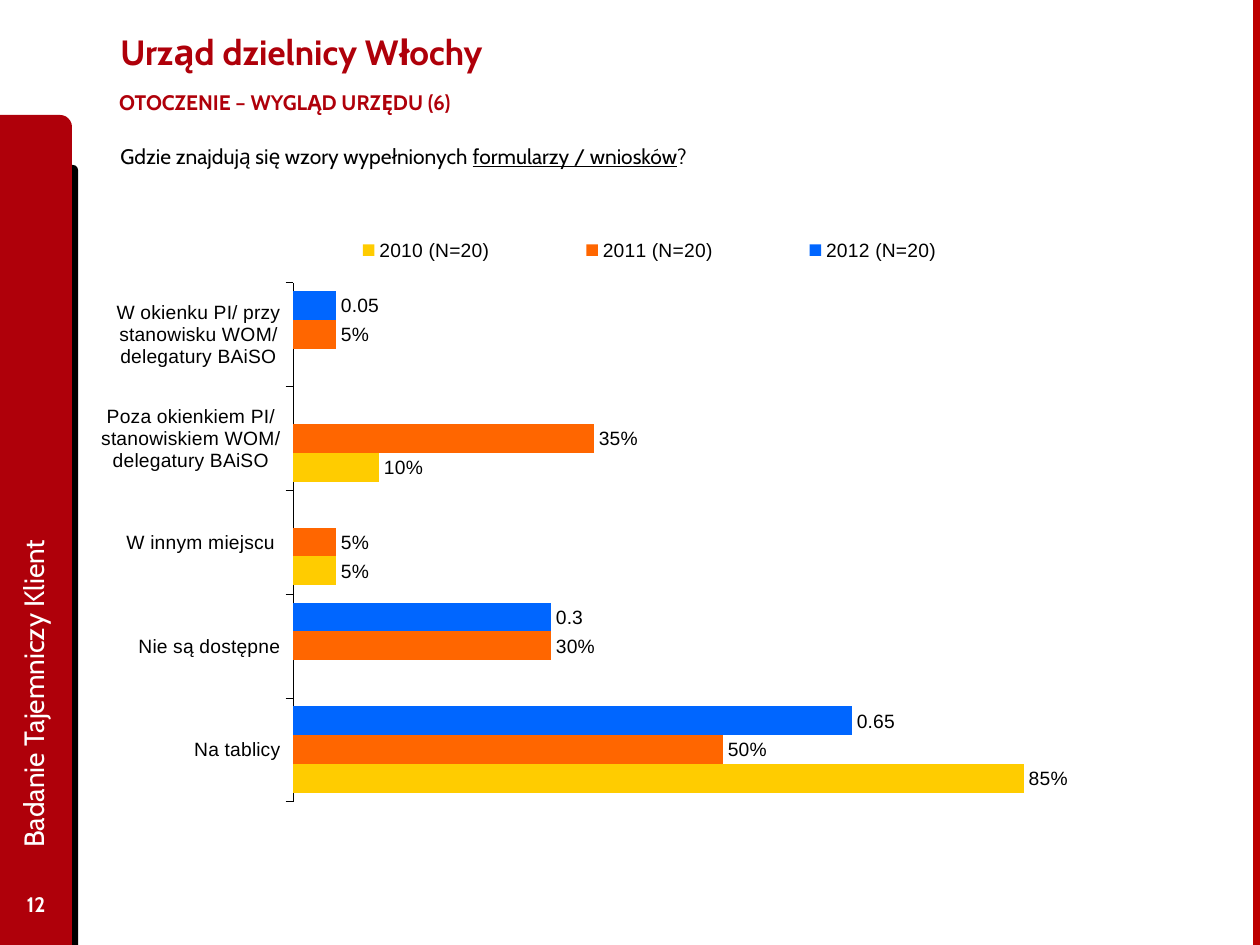
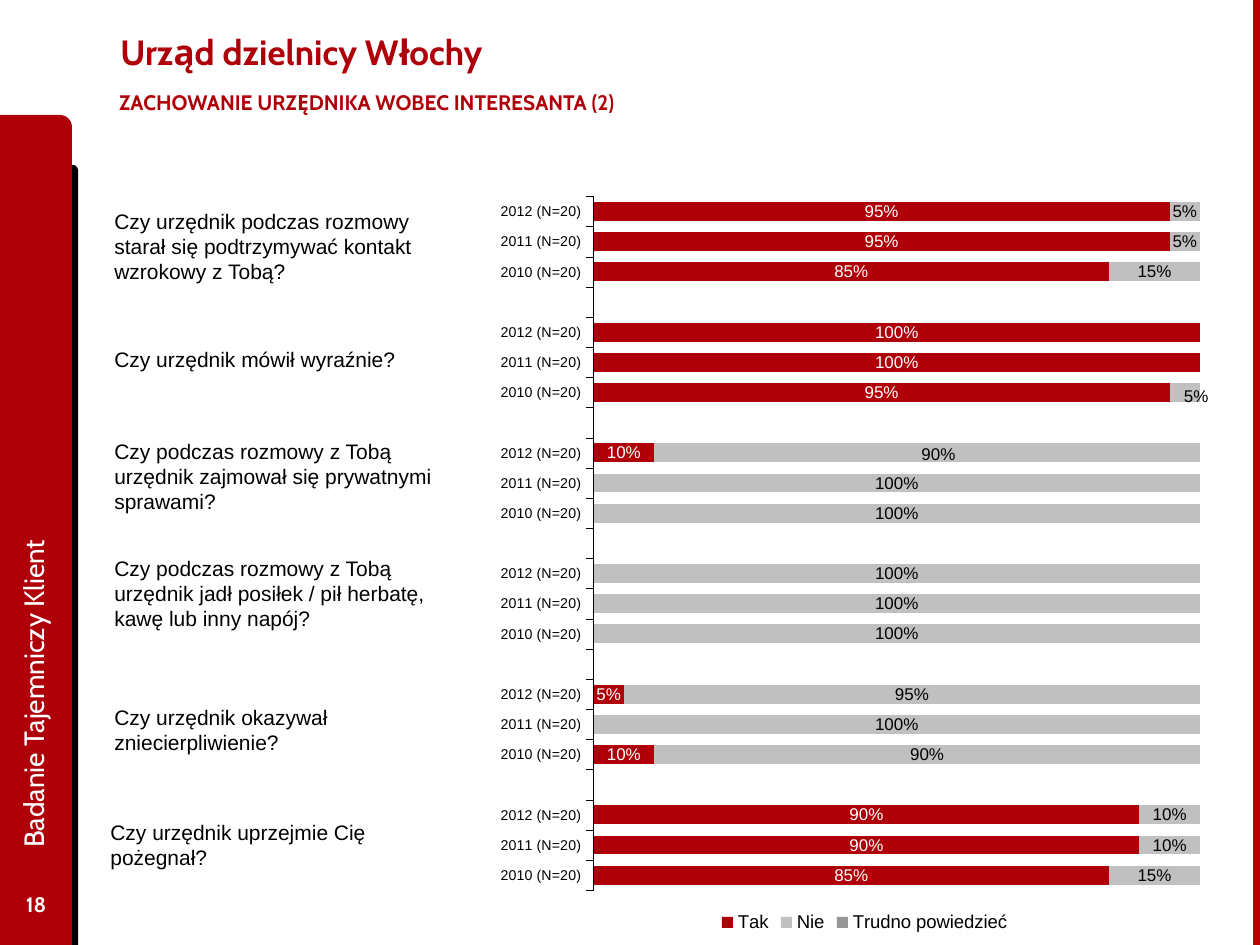
import pptx
import pptx.util
import pptx.chart.data
import pptx.dml.color
import pptx.enum.chart
import pptx.enum.shapes
import pptx.enum.text
import pptx.oxml

SCALE = 914400 / 126
RED, BLACK, WHITE, GREY = "AF000A", "000000", "FFFFFF", "C0C0C0"
HEAD, BODY = "Cabin", "Arial"
CHART = pptx.enum.chart
ANCHOR = pptx.enum.text.MSO_ANCHOR
NS = 'xmlns:c="http://schemas.openxmlformats.org/drawingml/2006/chart"'


def emu(px):
    return pptx.util.Emu(round(px * SCALE))


def color(code):
    return pptx.dml.color.RGBColor.from_string(code)


def layout(x, y, w=None, h=None):
    """Manual layout element; without a size it is an offset."""
    if w is None:
        tags = {"x": x, "y": y}
    else:
        tags = {"layoutTarget": "inner", "xMode": "edge", "yMode": "edge",
                "x": x, "y": y, "w": w, "h": h}
    parts = "".join(f'<c:{tag} val="{val}"/>' for tag, val in tags.items())
    return pptx.oxml.parse_xml(
        f"<c:layout {NS}><c:manualLayout>{parts}</c:manualLayout></c:layout>")


def place(owner, item, after=None):
    """Swap in a layout, first in its owner or right after a child."""
    for old in owner.findall(item.tag):
        owner.remove(old)
    if after is None:
        owner.insert(0, item)
    else:
        after.addnext(item)


class Deck:
    def __init__(self):
        self.prs = pptx.Presentation()
        self.prs.slide_width, self.prs.slide_height = emu(1260), emu(945)
        self.slide = None

    def font(self, font, size, code, name=BODY, bold=False):
        font.size, font.name, font.bold = pptx.util.Pt(size), name, bold
        font.color.rgb = color(code)

    def block(self, kind, box, code):
        shape = self.slide.shapes.add_shape(kind, *map(emu, box))
        shape.shadow.inherit = False
        shape.fill.solid()
        shape.fill.fore_color.rgb = color(code)
        shape.line.fill.background()

    def text(self, runs, box, size, code=BLACK, name=HEAD, bold=False,
             anchor=ANCHOR.TOP, align=None, turn=0):
        """Add a text box; every second run is underlined."""
        shape = self.slide.shapes.add_textbox(*map(emu, box))
        shape.rotation = turn
        frame = shape.text_frame
        frame.word_wrap, frame.vertical_anchor = True, anchor
        par = frame.paragraphs[0]
        par.alignment = align
        for num, part in enumerate(runs):
            run = par.add_run()
            run.text = part
            self.font(run.font, size, code, name, bold)
            run.font.underline = num % 2 == 1
        return frame

    def page(self, num, topic):
        self.slide = self.prs.slides.add_slide(self.prs.slide_layouts[6])
        kinds = pptx.enum.shapes.MSO_SHAPE
        mid = ANCHOR.MIDDLE
        self.block(kinds.ROUND_1_RECTANGLE, (48, 165, 30, 780), BLACK)
        self.block(kinds.ROUND_1_RECTANGLE, (0, 115, 72, 830), RED)
        self.block(kinds.RECTANGLE, (1253, 0, 7, 945), "BD0000")
        self.text(["Urząd dzielnicy Włochy"], (108, 6, 979, 91), 20, RED,
                  bold=True, anchor=mid)
        frame = self.text([topic], (94, 83, 900, 42), 12, RED, bold=True)
        frame.margin_left = frame.margin_right = emu(25)
        self.text([str(num)], (0, 879, 72, 50), 12, WHITE, bold=True,
                  anchor=mid, align=pptx.enum.text.PP_ALIGN.CENTER)
        self.text(["Badanie Tajemniczy Klient"], (-330, 465, 726, 64), 16,
                  WHITE, anchor=mid, turn=270)

    def chart(self, kind, box, cats, rows, plot, top, size, axis, mark, spot,
              legend):
        """Add a bar chart; a row is name, values, fill, label colour, format."""
        data = pptx.chart.data.CategoryChartData()
        data.categories = cats
        for name, vals, _, _, form in rows:
            data.add_series(name, vals, form)
        chart = self.slide.shapes.add_chart(kind, *map(emu, box), data).chart
        self.font(chart.font, size, BLACK)
        chart.has_title = False
        chart.has_legend = True
        chart.legend.position = legend
        chart.legend.include_in_layout = False
        self.font(chart.legend.font, size, BLACK)
        cat, val = chart.category_axis, chart.value_axis
        cat.reverse_order = True
        cat.major_tick_mark = CHART.XL_TICK_MARK.OUTSIDE
        cat.format.line.color.rgb = color(BLACK)
        cat.format.line.width = pptx.util.Pt(0.25)
        self.font(cat.tick_labels.font, axis, BLACK)
        val.visible = val.has_major_gridlines = False
        val.minimum_scale, val.maximum_scale = 0, top
        bars = chart.plots[0]
        bars.gap_width, bars.vary_by_categories = 60, False
        for series, (_, _, fill, ink, form) in zip(bars.series, rows):
            series.format.fill.solid()
            series.format.fill.fore_color.rgb = color(fill)
            series.invert_if_negative = False
            labels = series.data_labels
            labels.show_value, labels.position = True, spot
            labels.number_format, labels.number_format_is_linked = form, False
            self.font(labels.font, mark, ink)
        place(chart.plots[0]._element.getparent(), layout(*plot))
        return chart

    def nudge(self, series, num, x, y, size):
        """Shift one percent label by a share of the chart."""
        label = series.points[num].data_label
        self.font(label.font, size, BLACK)
        label.position = CHART.XL_LABEL_POSITION.CENTER
        item = series.data_labels._element.xpath(
            f"c:dLbl[c:idx/@val='{num}']")[0]
        place(item, layout(x, y), item[0])
        item[1].addnext(pptx.oxml.parse_xml(
            f'<c:numFmt {NS} formatCode="0%" sourceLinked="0"/>'))


def forms(deck):
    deck.page(12, "OTOCZENIE – WYGLĄD URZĘDU (6)")
    deck.text(["Gdzie znajdują się wzory wypełnionych ",
               "formularzy / wniosków", "?"], (108, 137, 815, 38), 12)
    cats = ["W okienku PI/ przy stanowisku WOM/ delegatury BAiSO",
            "Poza okienkiem PI/ stanowiskiem WOM/ delegatury BAiSO",
            "W innym miejscu ", "Nie są dostępne", "Na tablicy"]
    rows = [
        ("2012 (N=20)", (0.05, None, None, 0.3, 0.65), "0066FF", BLACK,
         "General"),
        ("2011 (N=20)", (0.05, 0.35, 0.05, 0.3, 0.5), "FF6600", BLACK, "0%"),
        ("2010 (N=20)", (None, 0.1, 0.05, None, 0.85), "FFCC00", BLACK, "0%"),
    ]
    chart = deck.chart(
        CHART.XL_CHART_TYPE.BAR_CLUSTERED, (101, 233, 1143, 570), cats, rows,
        (0.168, 0.087, 0.677, 0.911), 0.9, 11, 11, 11,
        CHART.XL_LABEL_POSITION.OUTSIDE_END, CHART.XL_LEGEND_POSITION.TOP)
    legend = chart.legend._element
    spread = layout(0.15, 0, 0.66, 0.06)
    spread[0].remove(spread[0][0])
    place(legend, spread, legend[0])


def manners(deck):
    deck.page(18, "ZACHOWANIE URZĘDNIKA WOBEC INTERESANTA (2)")
    asks = [
        ("Czy urzędnik podczas rozmowy starał się podtrzymywać kontakt "
         "wzrokowy z Tobą?", 102, 202, (0.95, 0.95, 0.85)),
        ("Czy urzędnik mówił wyraźnie?", 102, 340, (1, 1, 0.95)),
        ("Czy podczas rozmowy z Tobą urzędnik zajmował się prywatnymi "
         "sprawami?", 102, 432, (0.1, 0, 0)),
        ("Czy podczas rozmowy z Tobą urzędnik jadł posiłek / pił herbatę, "
         "kawę lub inny napój?", 102, 549, (0, 0, 0)),
        ("Czy urzędnik okazywał zniecierpliwienie?", 102, 698,
         (0.05, 0, 0.1)),
        ("Czy urzędnik uprzejmie Cię pożegnał?", 98, 813, (0.9, 0.9, 0.85)),
    ]
    cats, yes, no = [], [], []
    for ask, left, top, shares in asks:
        deck.text([ask], (left, top, 343, 88), 12, name=BODY)
        if cats:
            cats.append("")
            yes.append(None)
            no.append(None)
        cats += [f"{year} (N=20)" for year in (2012, 2011, 2010)]
        yes += [share or None for share in shares]
        no += [round(1 - share, 2) or None for share in shares]
    rows = [("Tak", yes, RED, WHITE, "0%"), ("Nie", no, GREY, BLACK, "0%"),
            ("Trudno powiedzieć", [None] * len(cats), "969696", BLACK, "0%")]
    chart = deck.chart(
        CHART.XL_CHART_TYPE.BAR_STACKED, (484, 195, 761, 743), cats, rows,
        (0.144, 0.002, 0.797, 0.934), 1, 10.6, 8.1, 9.7,
        CHART.XL_LABEL_POSITION.CENTER, CHART.XL_LEGEND_POSITION.BOTTOM)
    chart.plots[0].overlap = 100
    chart.value_axis.major_unit = 0.2
    series = chart.plots[0].series[1]
    deck.nudge(series, 6, 0.015, 0.006, 9.7)
    deck.nudge(series, 8, 0.015, 0.002, 9.7)


def main():
    deck = Deck()
    forms(deck)
    manners(deck)
    deck.prs.save("out.pptx")


if __name__ == "__main__":
    main()
